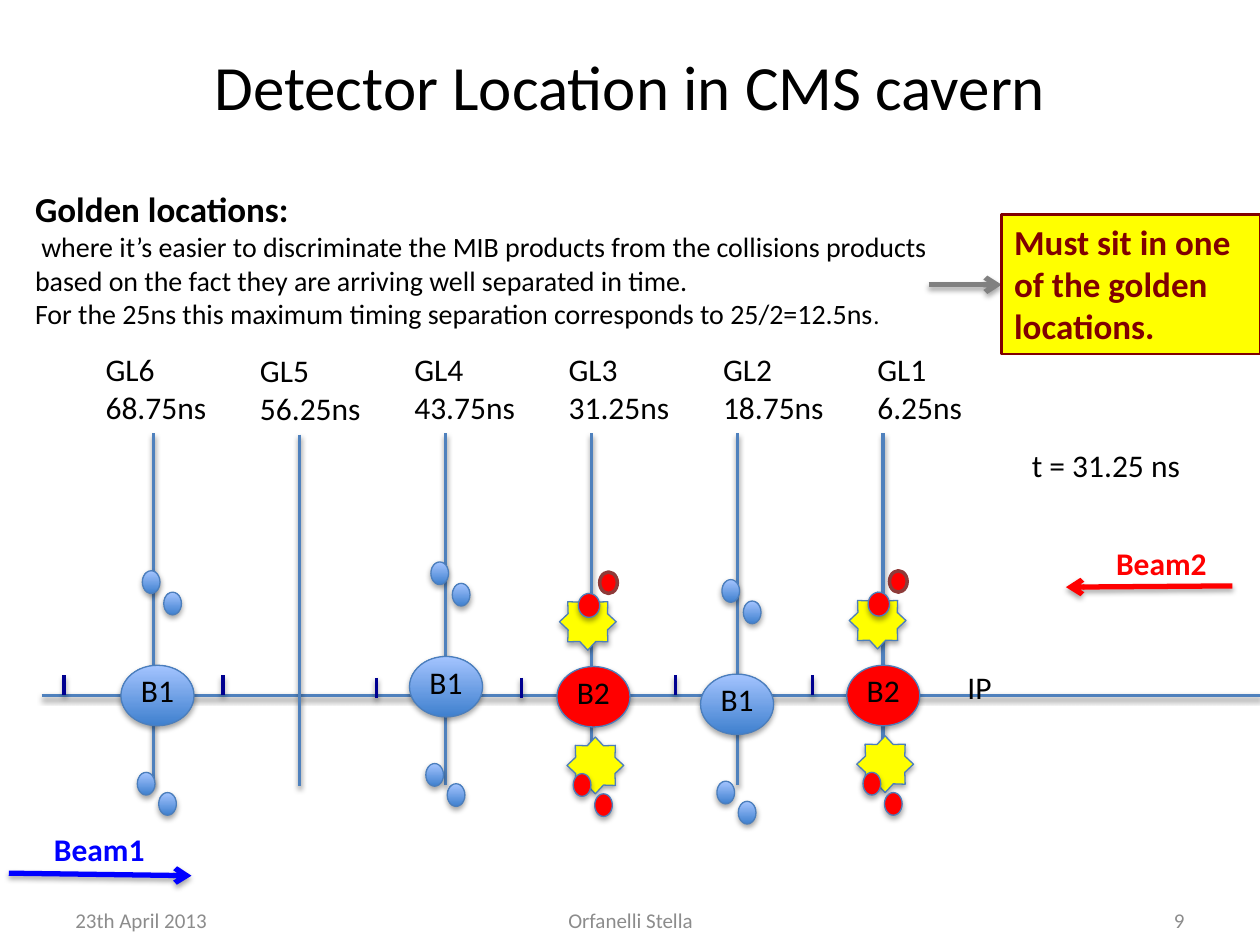
from lxml.etree import SubElement
from pptx import Presentation
from pptx.dml.color import RGBColor
from pptx.enum.shapes import MSO_CONNECTOR, MSO_SHAPE
from pptx.enum.text import MSO_ANCHOR, PP_ALIGN
from pptx.oxml.ns import qn
from pptx.util import Inches, Pt

BLACK = RGBColor(0x00, 0x00, 0x00)
GRAY = RGBColor(0x80, 0x80, 0x80)
FOOTER_GRAY = RGBColor(0x8C, 0x8C, 0x8C)
RED = RGBColor(0xFF, 0x00, 0x00)
BLUE = RGBColor(0x00, 0x00, 0xFF)
NAVY = RGBColor(0x00, 0x00, 0x90)
STEEL = RGBColor(0x4F, 0x81, 0xBD)
OUTLINE = RGBColor(0x4B, 0x7E, 0xBC)
DARK_RED = RGBColor(0x8E, 0x3B, 0x39)
MAROON = RGBColor(0x80, 0x00, 0x00)
YELLOW = RGBColor(0xFF, 0xFF, 0x00)
BUNCH_BOTTOM = RGBColor(0x3F, 0x80, 0xCE)
BUNCH_TOP = RGBColor(0xA4, 0xC4, 0xFF)

prs = Presentation()
prs.slide_width, prs.slide_height = Inches(10), Inches(7.5)
CELL = prs.slide_width / 100  # the slide is a grid of 100 columns by 75 rows
slide = prs.slides.add_slide(prs.slide_layouts[6])


def add_text(area, lines, size=18, color=BLACK, bold=False,
             align=PP_ALIGN.LEFT, anchor=MSO_ANCHOR.TOP):
    """Add a text box; area is left, top, width and height in grid cells."""
    box = slide.shapes.add_textbox(*[round(n * CELL) for n in area])
    frame = box.text_frame
    frame.word_wrap = True
    frame.vertical_anchor = anchor
    frame.text = "\n".join(lines)
    for paragraph in frame.paragraphs:
        paragraph.alignment = align
        font = paragraph.font
        font.name, font.size, font.bold = "Calibri", Pt(size), bold
        font.color.rgb = color
    return box


def add_shadow(item, opacity):
    """Drop a soft black shadow straight down; opacity is in percent."""
    effects = SubElement(item.element.spPr, qn("a:effectLst"))
    shadow = SubElement(effects, qn("a:outerShdw"), blurRad=str(Pt(3.1)),
                        dist=str(Pt(1.7)), dir="5400000", rotWithShape="0")
    black = SubElement(shadow, qn("a:srgbClr"), val="000000")
    SubElement(black, qn("a:alpha"), val=str(opacity * 1000))


# Title and footer
add_text((12.9, 0, 74.2, 13.5), ["Detector Location in CMS cavern"], 36,
         align=PP_ALIGN.CENTER, anchor=MSO_ANCHOR.MIDDLE)
for left, width, note, align in [
    (5, 23.3, "23th April 2013", PP_ALIGN.LEFT),
    (34.2, 31.7, "Orfanelli Stella", PP_ALIGN.CENTER),
    (71.7, 23.3, "9", PP_ALIGN.RIGHT),
]:
    add_text((left, 71, width, 4), [note], 12, FOOTER_GRAY,
             align=align, anchor=MSO_ANCHOR.MIDDLE)

# Beam line, golden locations, ticks and arrows: x1, y1, x2, y2, colour, arrow
tracks = [(3.3, 55.2, 100, 55.2, STEEL, False)]
arrivals = ["68.75ns", "56.25ns", "43.75ns", "31.25ns", "18.75ns", "6.25ns"]
for column, arrival in enumerate(arrivals):
    post = 12.2 + 11.58 * column
    drop = 0.1 if column == 1 else 0
    tracks.append((post, 34.4 + drop, post, 62.3 + drop, STEEL, False))
    add_text((7.4 + 12.25 * column, 27.3 + drop, 12.3, 7.1),
             [f"GL{6 - column}", arrival])
for tick, top in [(5.1, 53.6), (17.7, 53.6), (29.9, 53.8),
                  (41.4, 53.8), (53.6, 53.6), (64.5, 53.6)]:
    tracks.append((tick, top, tick, top + 1.6, NAVY, False))
tracks += [
    (97.8, 46.5, 84.6, 46.6, RED, True),
    (0.7, 69.3, 15.2, 69.5, BLUE, True),
    (73.7, 22.6, 79.5, 22.6, GRAY, True),
]
for *ends, color, is_arrow in tracks:
    track = slide.shapes.add_connector(
        MSO_CONNECTOR.STRAIGHT, *[round(n * CELL) for n in ends])
    track.line.color.rgb = color
    track.line.width = Pt(3 if is_arrow else 2)
    if is_arrow:
        SubElement(track.element.spPr.find(qn("a:ln")), qn("a:tailEnd"),
                   type="arrow")
    add_shadow(track, 35 if is_arrow else 38)

add_text((75.8, 52.5, 5.1, 4), ["IP"])
add_text((80.9, 34.9, 14.1, 4), ["t = 31.25 ns"])
add_text((87.6, 42.7, 12.4, 4), ["Beam2"], color=RED, bold=True)
add_text((3.3, 65.4, 12, 4), ["Beam1"], color=BLUE, bold=True)

# Parts of a bunch, offset from its body: preset, x, y, width, height, fill, line
OVAL, STAR = MSO_SHAPE.OVAL, MSO_SHAPE.STAR_8_POINT
BUNCH_PARTS = {
    "B1": [
        (OVAL, 0, 0, 5.8, 4.8, None, OUTLINE),
        (OVAL, 1.3, 8.5, 1.4, 1.8, None, OUTLINE),
        (OVAL, 3, 10.1, 1.4, 1.8, None, OUTLINE),
        (OVAL, 1.7, -7.5, 1.4, 1.8, None, OUTLINE),
        (OVAL, 3.4, -5.8, 1.4, 1.8, None, OUTLINE),
    ],
    "B2": [
        (STAR, 0.2, -5.8, 4.5, 4.5, YELLOW, OUTLINE),
        (STAR, 0.8, 5.6, 4.5, 4.5, YELLOW, OUTLINE),
        (OVAL, 0, 0, 5.8, 4.8, RED, OUTLINE),
        (OVAL, 1.3, 8.5, 1.4, 1.8, RED, OUTLINE),
        (OVAL, 3, 10.1, 1.4, 1.8, RED, OUTLINE),
        (OVAL, 1.7, -5.8, 1.7, 1.9, RED, OUTLINE),
        (OVAL, 3.4, -7.5, 1.4, 1.7, RED, DARK_RED),
    ],
}
for bunch, left, top in [("B2", 67.2, 52.8), ("B2", 44.2, 52.9),
                         ("B1", 9.6, 52.8), ("B1", 32.5, 52.1),
                         ("B1", 55.6, 53.5)]:
    for preset, x, y, width, height, color, edge in BUNCH_PARTS[bunch]:
        area = (left + x, top + y, width, height)
        part = slide.shapes.add_shape(preset, *[round(n * CELL) for n in area])
        if color is None:
            part.fill.gradient()
            part.fill.gradient_angle = 90
            for stop, shade in zip(part.fill.gradient_stops,
                                   (BUNCH_BOTTOM, BUNCH_TOP)):
                stop.color.rgb = shade
        else:
            part.fill.solid()
            part.fill.fore_color.rgb = color
        part.line.color.rgb = edge
        if edge == DARK_RED:
            part.line.width = Pt(2)
            part.shadow.inherit = False
        else:
            part.line.width = Pt(0.75)
            add_shadow(part, 35)
    add_text((left + 0.6, top, 5.2, 4), [bunch])

# Explanation and conclusion
explanation = add_text((1.8, 14.4, 73.3, 12.5), [
    "Golden locations:",
    " where it’s easier to discriminate the MIB products from the collisions "
    "products based on the fact they are arriving well separated in time.",
    "For the 25ns this maximum timing separation corresponds to 25/2=12.5ns",
], 16)
heading, _, timing = explanation.text_frame.paragraphs
heading.font.size, heading.font.bold = Pt(20), True
full_stop = timing.add_run()
full_stop.text = "."
full_stop.font.size = Pt(14)

conclusion = add_text((79.5, 17, 20.5, 11.1),
                      ["Must sit in one of the golden locations."],
                      20, MAROON, bold=True)
conclusion.fill.solid()
conclusion.fill.fore_color.rgb = YELLOW
conclusion.line.color.rgb = MAROON
conclusion.line.width = Pt(1.5)

prs.save("out.pptx")
